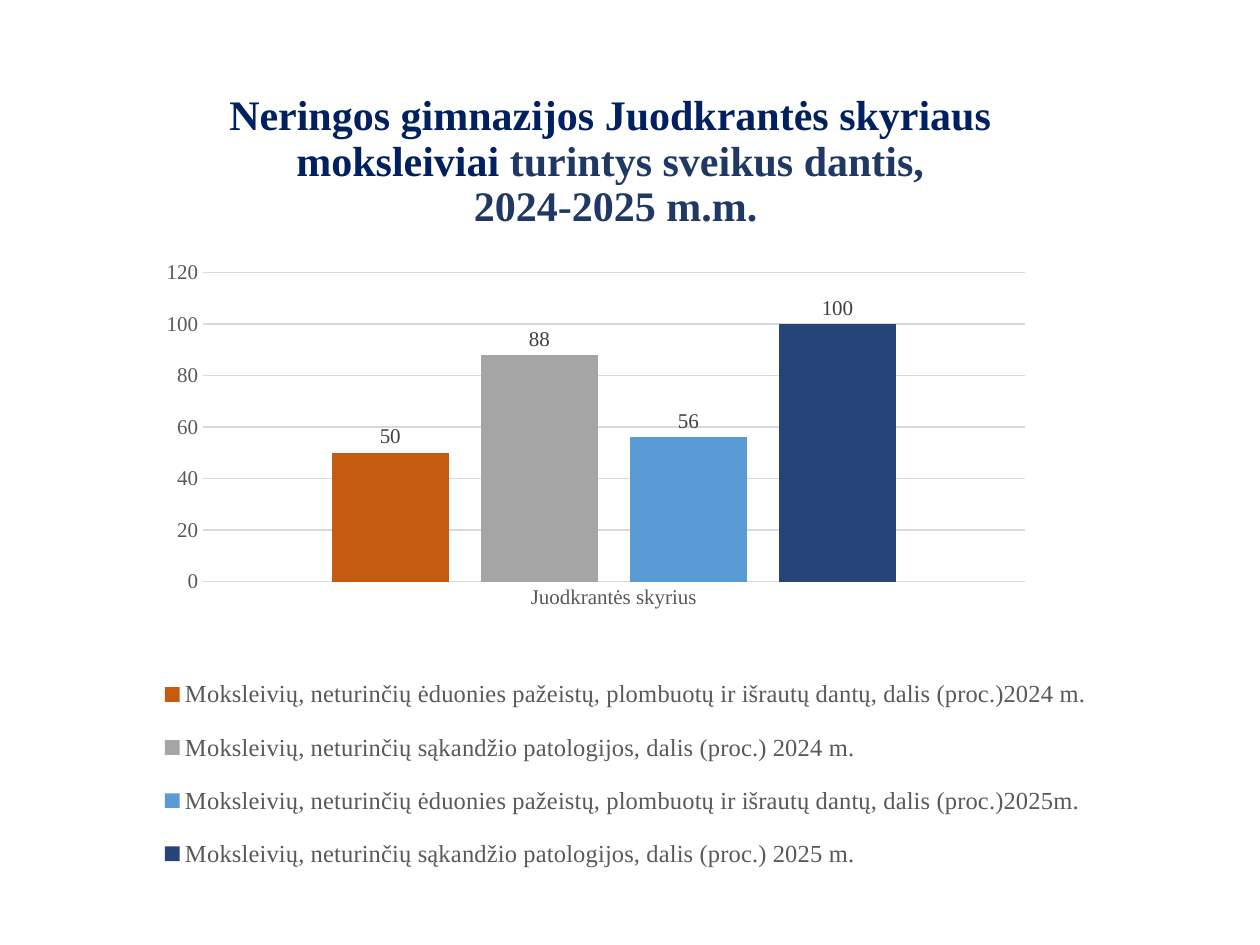
from dataclasses import dataclass
from typing import Any

from lxml import etree
from pptx import Presentation
from pptx import util as u
from pptx.chart.data import CategoryChartData
from pptx.dml.color import RGBColor
from pptx.enum import chart as charts, text
from pptx.oxml.ns import qn

EMU_PER_PX = 914400 / 126
FONT = "Times New Roman"
NAVY, SLATE = "002060", "203864"
AXIS_TEXT, LABEL_TEXT, GRID = "595959", "404040", "D9D9D9"


@dataclass
class Box:
    left: int
    top: int
    width: int
    height: int

    def emu(self) -> list[int]:
        return [px(side) for side in (self.left, self.top, self.width, self.height)]


@dataclass
class Series:
    name: str
    value: int
    color: str


@dataclass
class TitleRun:
    lines: list[str]
    color: str


TITLE = [
    TitleRun(["Neringos gimnazijos Juodkrantės skyriaus ", "moksleiviai "], NAVY),
    TitleRun(["turintys sveikus dantis, ", "2024-2025 m.m."], SLATE),
]
DAMAGED = "Moksleivių, neturinčių ėduonies pažeistų, plombuotų ir išrautų dantų, dalis (proc.)"
BITE = "Moksleivių, neturinčių sąkandžio patologijos, dalis (proc.)"
SERIES = [
    Series(f"{DAMAGED}2024 m.", 50, "C55A11"),
    Series(f"{BITE} 2024 m.", 88, "A5A5A5"),
    Series(f"{DAMAGED}2025m.", 56, "5B9BD5"),
    Series(f"{BITE} 2025 m.", 100, "264478"),
]
PLOT_LAYOUT = {"layoutTarget": "inner", "xMode": "edge", "yMode": "edge",
               "x": 0.096, "y": 0.019, "w": 0.804, "h": 0.461}
LEGEND_LAYOUT = {"xMode": "edge", "yMode": "edge",
                 "x": 0.05, "y": 0.59, "w": 0.92, "h": 0.355}


def px(length: int) -> int:
    return round(length * EMU_PER_PX)


def rgb(color: str) -> RGBColor:
    return RGBColor.from_string(color)


def set_values(target: Any, values: dict[str, Any]) -> None:
    for name, value in values.items():
        setattr(target, name, value)


def style_font(font: Any, size: int, color: str, bold: bool = False) -> None:
    set_values(font, {"name": FONT, "size": u.Pt(size), "bold": bold})
    font.color.rgb = rgb(color)


def style_line(line: Any) -> None:
    line.color.rgb = rgb(GRID)
    line.width = u.Pt(0.75)


def set_layout(layout: Any, values: dict[str, Any]) -> None:
    """Place a chart part by fractions of the chart area."""
    for child in list(layout):
        layout.remove(child)
    manual = etree.SubElement(layout, qn("c:manualLayout"))
    for name, value in values.items():
        etree.SubElement(manual, qn(f"c:{name}")).set("val", str(value))


def add_title(slide: Any, box: Box, runs: list[TitleRun]) -> None:
    frame = slide.shapes.add_textbox(*box.emu()).text_frame
    set_values(frame, {"word_wrap": True, "auto_size": text.MSO_AUTO_SIZE.NONE,
                       "vertical_anchor": text.MSO_ANCHOR.MIDDLE})
    paragraph = frame.paragraphs[0]
    set_values(paragraph, {"alignment": text.PP_ALIGN.CENTER, "line_spacing": 0.9})
    for title_run in runs:
        for index, line in enumerate(title_run.lines):
            if index:
                paragraph.add_line_break()
            run = paragraph.add_run()
            run.text = line
            style_font(run.font, 24, title_run.color, bold=True)


def style_axes(chart: Any) -> None:
    for axis in (chart.category_axis, chart.value_axis):
        set_values(axis, {"major_tick_mark": charts.XL_TICK_MARK.NONE,
                          "minor_tick_mark": charts.XL_TICK_MARK.NONE})
        style_font(axis.tick_labels.font, 12, AXIS_TEXT)
    style_line(chart.category_axis.format.line)
    set_values(chart.value_axis, {"minimum_scale": 0, "maximum_scale": 120,
                                  "major_unit": 20, "has_major_gridlines": True})
    chart.value_axis.format.line.fill.background()
    style_line(chart.value_axis.major_gridlines.format.line)


def style_legend(chart: Any) -> None:
    chart.has_legend = True
    legend = chart.legend
    set_values(legend, {"position": charts.XL_LEGEND_POSITION.BOTTOM,
                        "include_in_layout": False})
    style_font(legend.font, 14, AXIS_TEXT)
    layout = legend._element.find(qn("c:layout"))
    if layout is None:
        layout = etree.Element(qn("c:layout"))
        legend._element.find(qn("c:legendPos")).addnext(layout)
    set_layout(layout, LEGEND_LAYOUT)


def add_column_chart(slide: Any, box: Box, category: str, columns: list[Series]) -> None:
    data = CategoryChartData()
    data.categories = [category]
    for column in columns:
        data.add_series(column.name, [column.value])
    chart = slide.shapes.add_chart(
        charts.XL_CHART_TYPE.COLUMN_CLUSTERED, *box.emu(), data).chart
    chart.has_title = False
    style_font(chart.font, 12, "000000")

    plot = chart.plots[0]
    set_values(plot, {"gap_width": 219, "overlap": -27, "vary_by_categories": False})
    for series, column in zip(plot.series, columns):
        series.format.fill.solid()
        series.format.fill.fore_color.rgb = rgb(column.color)
        labels = series.data_labels
        set_values(labels, {"show_value": True,
                            "position": charts.XL_LABEL_POSITION.OUTSIDE_END})
        style_font(labels.font, 12, LABEL_TEXT)

    style_axes(chart)
    style_legend(chart)
    plot_area = chart._chartSpace.chart.plotArea
    layout = plot_area.find(qn("c:layout"))
    if layout is None:
        layout = etree.Element(qn("c:layout"))
        plot_area.insert(0, layout)
    set_layout(layout, PLOT_LAYOUT)


def main() -> None:
    presentation = Presentation()
    set_values(presentation, {"slide_width": px(1260), "slide_height": px(945)})
    slide = presentation.slides.add_slide(presentation.slide_layouts[6])
    add_title(slide, Box(-19, 106, 1269, 113), TITLE)
    add_column_chart(slide, Box(105, 260, 1022, 670), "Juodkrantės skyrius", SERIES)
    presentation.save("out.pptx")


if __name__ == "__main__":
    main()
